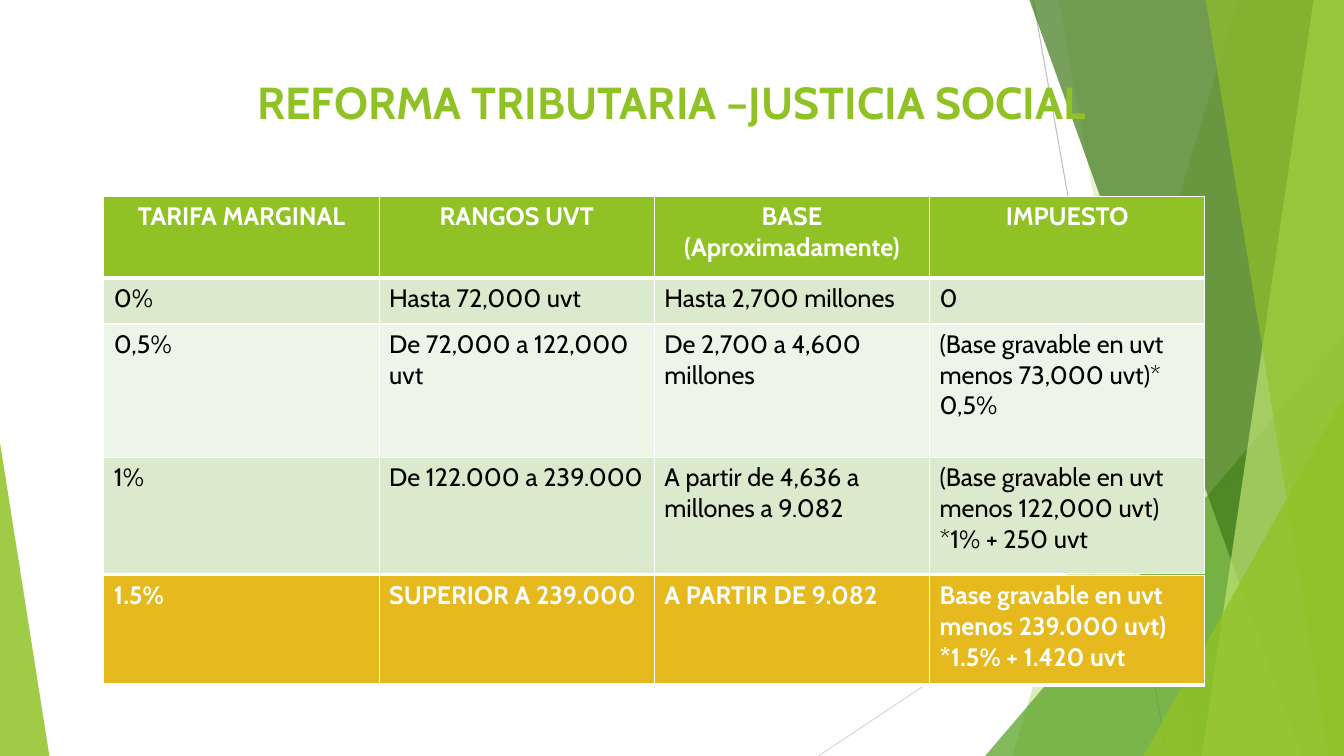
from dataclasses import dataclass

from lxml import etree
from pptx import Presentation
from pptx.dml.color import RGBColor
from pptx.enum.shapes import MSO_CONNECTOR, MSO_SHAPE
from pptx.enum.text import MSO_ANCHOR, PP_ALIGN
from pptx.oxml.ns import qn
from pptx.util import Pt

STRAIGHT = MSO_CONNECTOR.STRAIGHT
TRIANGLE = MSO_SHAPE.ISOSCELES_TRIANGLE
TOP = MSO_ANCHOR.TOP
LEFT, CENTER = PP_ALIGN.LEFT, PP_ALIGN.CENTER


@dataclass(frozen=True)
class Theme:
    font: str = "Cabin"
    title_size: float = 32
    body_size: float = 18
    green: str = "90C226"
    mid_green: str = "54A021"
    dark_green: str = "3F7819"
    lime: str = "C0E474"
    band_dark: str = "DBE9CD"
    band_light: str = "EEF4E8"
    gold: str = "E6B91E"
    white: str = "FFFFFF"
    black: str = "000000"
    line_dark: str = "BFBFBF"
    line_light: str = "D9D9D9"


T = Theme()

HEADER = ["TARIFA MARGINAL", "RANGOS UVT", "BASE (Aproximadamente)", "IMPUESTO"]
BRACKETS = [
    ["0%", "Hasta 72,000 uvt", "Hasta 2,700 millones", "0"],
    ["0,5%", "De 72,000 a 122,000 uvt", "De 2,700 a 4,600 millones",
     "(Base gravable en uvt menos 73,000 uvt)* 0,5%"],
    ["1%", "De 122.000 a 239.000", "A partir de 4,636 a millones a 9.082",
     "(Base gravable en uvt menos 122,000 uvt) *1% + 250 uvt"],
]
TOP_BRACKET = ["1.5%", "SUPERIOR A 239.000", "A PARTIR DE 9.082",
               "Base gravable en uvt menos 239.000 uvt) *1.5% + 1.420 uvt"]


def write(tf, text, size=T.body_size, color=T.black, bold=False, align=LEFT):
    tf.word_wrap = True
    p = tf.paragraphs[0]
    p.alignment = align
    r = p.add_run()
    r.text = text
    r.font.name, r.font.size, r.font.bold = T.font, Pt(size), bold
    r.font.color.rgb = RGBColor.from_string(color)


def paint(sp, color, opacity):
    sp.shadow.inherit = False
    sp.fill.solid()
    sp.fill.fore_color.rgb = RGBColor.from_string(color)
    sp.line.fill.background()
    clr = sp.fill._xPr.find(qn("a:solidFill")).find(qn("a:srgbClr"))
    etree.SubElement(clr, qn("a:alpha")).set("val", str(opacity * 1000))


def add_line(s, x1, y1, x2, y2, color):
    cx = s.shapes.add_connector(STRAIGHT, Pt(x1), Pt(y1), Pt(x2), Pt(y2))
    cx.line.color.rgb = RGBColor.from_string(color)
    cx.line.width = Pt(0.75)
    etree.SubElement(cx._element.spPr, qn("a:effectLst"))


def add_triangle(s, x, y, w, h, apex, color, opacity):
    sp = s.shapes.add_shape(TRIANGLE, Pt(x), Pt(y), Pt(w), Pt(h))
    sp.adjustments[0] = apex
    paint(sp, color, opacity)


def add_panel(s, right, bottom, top_w, bottom_w, color, opacity):
    """Four-sided panel that runs the full height along the right edge."""
    fb = s.shapes.build_freeform(Pt(right - top_w), 0)
    fb.add_line_segments([(Pt(right), 0), (Pt(right), Pt(bottom)),
                          (Pt(right - bottom_w), Pt(bottom))], close=True)
    paint(fb.convert_to_shape(), color, opacity)


def draw_facets(s, x, y, w, h):
    right, bottom = x + w, y + h
    # Thin rules behind the facets
    add_line(s, right - 222, y, right - 126.2, bottom, T.line_dark)
    add_line(s, right, y + 290.2, right - 375.4, bottom, T.line_light)

    # Right-hand facets: a panel has two widths, a triangle width and height
    facets = [
        ("panel", 75.7, 236.9, T.green, 30),
        ("panel", 203.8, 108, T.green, 20),
        ("triangle", 256.3, 300.2, T.mid_green, 72),
        ("panel", 224.7, 30.3, T.dark_green, 70),
        ("panel", 21.7, 101.5, T.lime, 70),
        ("panel", 98.7, 10.9, T.green, 65),
        ("triangle", 143.3, 257, T.green, 80),
    ]
    for kind, a, b, color, opacity in facets:
        if kind == "panel":
            add_panel(s, right, bottom, a, b, color, opacity)
        else:
            add_triangle(s, right - a, bottom - b, a, b, 1, color, opacity)

    # Left-hand wedge
    add_triangle(s, x, bottom - 223.9, 35.3, 223.9, 0, T.green, 85)


def draw_title(s, x, y, w, h, text):
    tf = s.shapes.add_textbox(Pt(x), Pt(y), Pt(w), Pt(h)).text_frame
    tf.vertical_anchor = TOP
    write(tf, text, size=T.title_size, color=T.green, bold=True, align=CENTER)


def set_borders(cell, bottom):
    tcPr = cell._tc.get_or_add_tcPr()
    for side, width in (("L", 1), ("R", 1), ("T", 1), ("B", bottom)):
        ln = etree.SubElement(tcPr, qn(f"a:ln{side}"), w=str(Pt(width)))
        fill = etree.SubElement(ln, qn("a:solidFill"))
        etree.SubElement(fill, qn("a:srgbClr"), val=T.white)


def draw_table(s, x, y, w, heights, rows, fills, strong, align=LEFT):
    """The row with index strong is bold white with a heavy lower border."""
    n = len(rows[0])
    tbl = s.shapes.add_table(len(rows), n, Pt(x), Pt(y), Pt(w),
                             Pt(sum(heights))).table
    tbl.first_row = tbl.horz_banding = False
    for col in tbl.columns:
        col.width = Pt(w / n)
    for i, (row, height, fill) in enumerate(zip(rows, heights, fills)):
        tbl.rows[i].height = Pt(height)
        bold = i == strong
        for j, text in enumerate(row):
            cell = tbl.cell(i, j)
            # The row below shares the heavy border, so only its own top is thin
            set_borders(cell, 3 if bold else 1)
            cell.fill.solid()
            cell.fill.fore_color.rgb = RGBColor.from_string(fill)
            write(cell.text_frame, text, bold=bold,
                  color=T.white if bold else T.black,
                  align=align if bold else LEFT)


def main():
    prs = Presentation()
    prs.slide_width, prs.slide_height = Pt(960), Pt(540)
    s = prs.slides.add_slide(prs.slide_layouts[6])

    draw_facets(s, 0, 0, 960, 540)
    draw_title(s, 66, 49.7, 828, 57.6, "REFORMA TRIBUTARIA –JUSTICIA SOCIAL")

    # Tax brackets, then the highlighted top bracket
    x, w = 74.2, 786.4
    draw_table(s, x, 140.4, w, [58, 33, 95.2, 83], [HEADER, *BRACKETS],
               [T.green, T.band_dark, T.band_light, T.band_dark],
               strong=0, align=CENTER)
    draw_table(s, x, 411, w, [78.5], [TOP_BRACKET], [T.gold], strong=0)

    prs.save("out.pptx")


if __name__ == "__main__":
    main()
